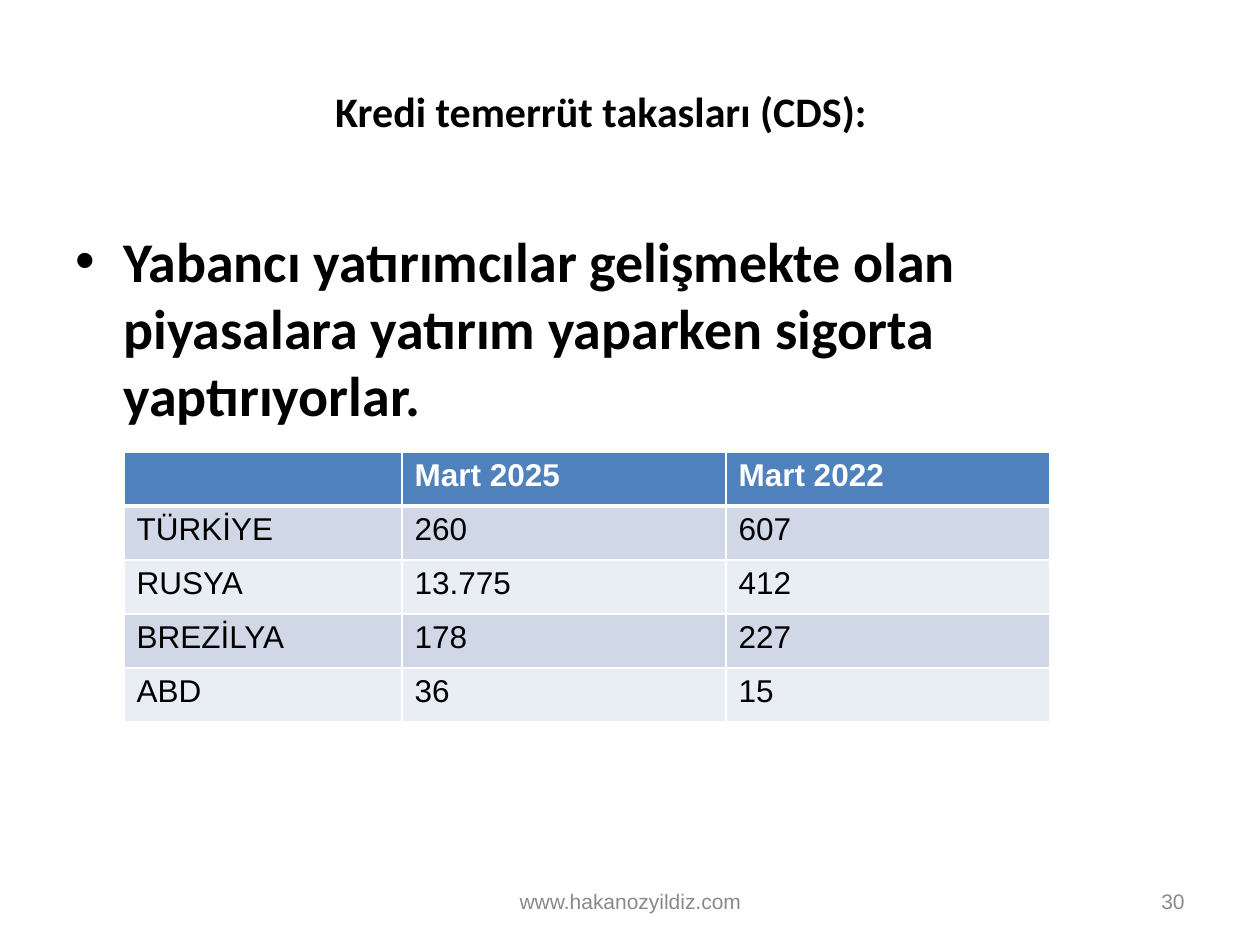
from dataclasses import dataclass

from lxml import etree
from pptx import Presentation
from pptx import util as u
from pptx.dml.color import RGBColor
from pptx.enum import text
from pptx.oxml import ns

EMU_PER_PX = 914400 / 126
BLACK, WHITE, GREY = "000000", "FFFFFF", "898989"
HEADER_FILL, BAND_FILLS = "4F81BD", ("D0D8E8", "E9EDF4")


@dataclass(frozen=True)
class Style:
    size: int
    font: str
    color: str
    bold: bool = False


@dataclass(frozen=True)
class Block:
    wording: str
    box: tuple[int, int, int, int]
    style: Style
    align: text.PP_ALIGN = text.PP_ALIGN.LEFT
    anchor: text.MSO_ANCHOR = text.MSO_ANCHOR.MIDDLE
    bulleted: bool = False


FOOTER = Style(12, "Arial", GREY)
BLOCKS = (
    Block("Kredi temerrüt takasları (CDS):", (34, 32, 1134, 158),
          Style(24, "Calibri", BLACK, True), text.PP_ALIGN.CENTER),
    Block("Yabancı yatırımcılar gelişmekte olan piyasalara yatırım yaparken sigorta yaptırıyorlar.",
          (63, 220, 1134, 624), Style(32, "Calibri", BLACK, True),
          anchor=text.MSO_ANCHOR.TOP, bulleted=True),
    Block("www.hakanozyildiz.com", (431, 876, 399, 50), FOOTER, text.PP_ALIGN.CENTER),
    Block("30", (903, 876, 294, 50), FOOTER, text.PP_ALIGN.RIGHT),
)
CDS_ROWS = (
    ("", "Mart 2025", "Mart 2022"),
    ("TÜRKİYE", "260", "607"),
    ("RUSYA", "13.775", "412"),
    ("BREZİLYA", "178", "227"),
    ("ABD", "36", "15"),
)
COLUMN_WIDTHS = (278, 324, 324)
ROW_HEIGHT = 54


def px(length: int) -> u.Emu:
    return u.Emu(round(length * EMU_PER_PX))


def rgb(value: str) -> RGBColor:
    return RGBColor.from_string(value)


def add_run(paragraph, wording: str, style: Style) -> None:
    run = paragraph.add_run()
    run.text = wording
    run.font.size = u.Pt(style.size)
    run.font.name = style.font
    run.font.bold = style.bold
    run.font.color.rgb = rgb(style.color)


def add_bullet(paragraph) -> None:
    properties = paragraph._p.get_or_add_pPr()
    properties.set("marL", str(px(48)))
    properties.set("indent", str(px(-48)))
    spacing = etree.SubElement(properties, ns.qn("a:spcBef"))
    etree.SubElement(spacing, ns.qn("a:spcPct"), val="20000")
    etree.SubElement(properties, ns.qn("a:buFont"), typeface="Arial")
    etree.SubElement(properties, ns.qn("a:buChar"), char="•")


def add_block(slide, block: Block) -> None:
    frame = slide.shapes.add_textbox(*map(px, block.box)).text_frame
    frame.word_wrap = True
    frame.vertical_anchor = block.anchor
    paragraph = frame.paragraphs[0]
    paragraph.alignment = block.align
    if block.bulleted:
        add_bullet(paragraph)
    add_run(paragraph, block.wording, block.style)


def add_borders(cell, top: int, bottom: int) -> None:
    properties = cell._tc.get_or_add_tcPr()
    sides = (("L", 1), ("R", 1), ("T", top), ("B", bottom))
    for position, (side, width) in enumerate(sides):
        line = etree.Element(ns.qn(f"a:ln{side}"), w=str(u.Pt(width)))
        fill = etree.SubElement(line, ns.qn("a:solidFill"))
        etree.SubElement(fill, ns.qn("a:srgbClr"), val=WHITE)
        properties.insert(position, line)


def add_cds_table(slide) -> None:
    table = slide.shapes.add_table(
        len(CDS_ROWS), len(COLUMN_WIDTHS), px(124), px(452),
        px(sum(COLUMN_WIDTHS)), px(ROW_HEIGHT * len(CDS_ROWS))).table
    for column, width in zip(table.columns, COLUMN_WIDTHS):
        column.width = px(width)
    for index, values in enumerate(CDS_ROWS):
        header = index == 0
        style = Style(18, "Arial", WHITE if header else BLACK, header)
        for column, value in enumerate(values):
            cell = table.cell(index, column)
            cell.fill.solid()
            cell.fill.fore_color.rgb = rgb(HEADER_FILL if header else BAND_FILLS[(index - 1) % 2])
            add_borders(cell, 3 if index == 1 else 1, 3 if header else 1)
            if value:
                add_run(cell.text_frame.paragraphs[0], value, style)


def main() -> None:
    deck = Presentation()
    deck.slide_width, deck.slide_height = px(1260), px(945)
    slide = deck.slides.add_slide(deck.slide_layouts[6])
    for block in BLOCKS:
        add_block(slide, block)
    add_cds_table(slide)
    deck.save("out.pptx")


if __name__ == "__main__":
    main()
